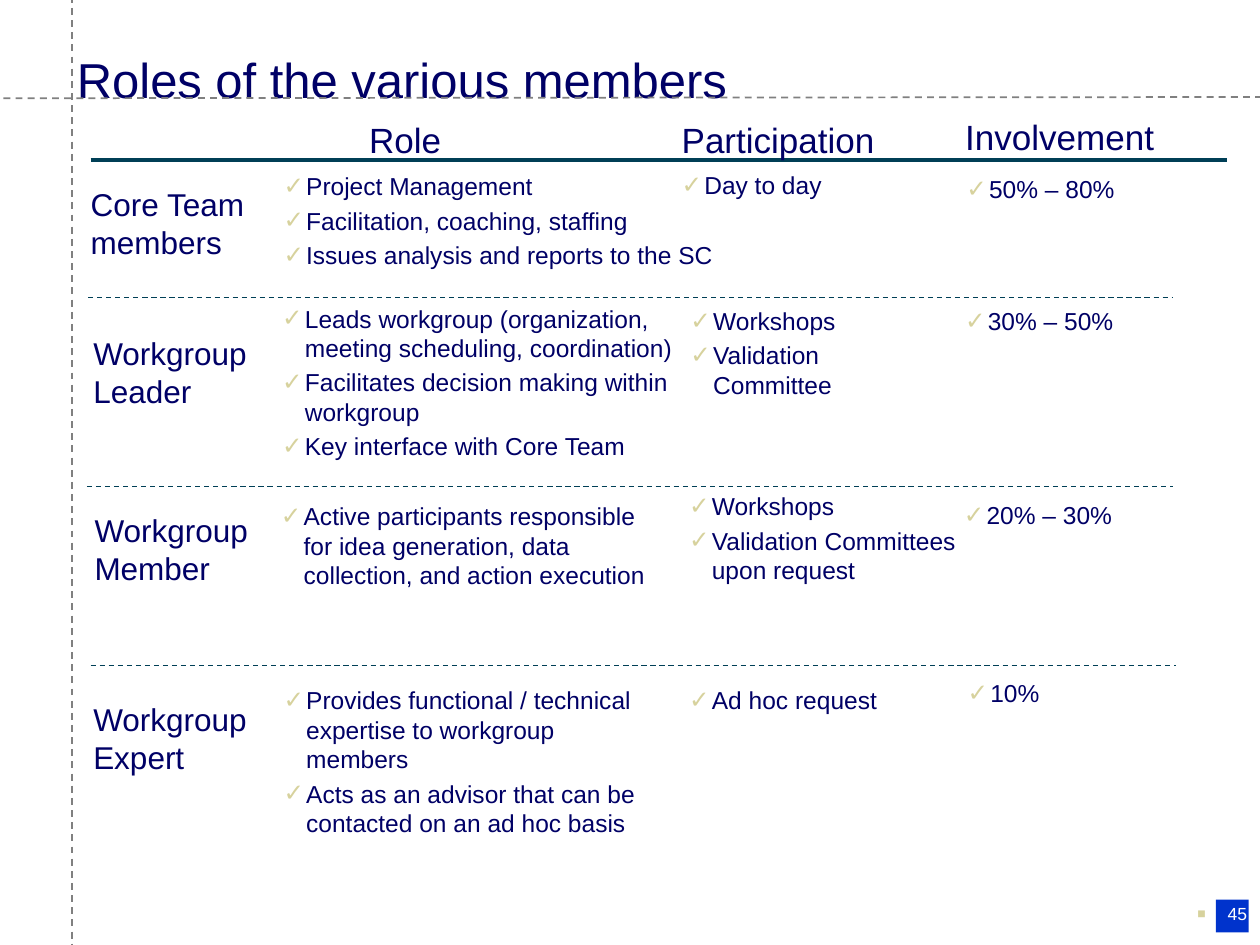
import pptx
import pptx.util
import pptx.dml.color
import pptx.enum.dml
import pptx.enum.shapes
import pptx.enum.text
import lxml.etree
from dataclasses import dataclass

Inches, Pt = pptx.util.Inches, pptx.util.Pt
MSO_ANCHOR, PP_ALIGN = pptx.enum.text.MSO_ANCHOR, pptx.enum.text.PP_ALIGN
NS = "http://schemas.openxmlformats.org/drawingml/2006/main"


@dataclass(frozen=True)
class Theme:
    font: str = "Arial"
    text: str = "000066"
    bullet: str = "D7D29D"
    rule: str = "003F56"
    guide: str = "808080"
    badge: str = "0033CC"
    white: str = "FFFFFF"
    title_pt: int = 28
    header_pt: int = 20
    label_pt: int = 18
    body_pt: int = 14
    number_pt: int = 10


class SlideBuilder:
    """Draw styled elements on one slide."""

    def __init__(self, s, theme):
        self.s, self.theme = s, theme

    def color(self, value):
        return pptx.dml.color.RGBColor.from_string(value)

    def style(self, p, size, color):
        formats = {"name": self.theme.font, "size": Pt(size), "bold": False}
        for r in p.runs:
            for key, value in formats.items():
                setattr(r.font, key, value)
            r.font.color.rgb = self.color(color)

    def bullet(self, p, char, indent, percent=100):
        pPr = p._p.get_or_add_pPr()
        pPr.set("marL", str(Inches(indent)))
        pPr.set("indent", str(-Inches(indent)))
        clr = lxml.etree.SubElement(pPr, f"{{{NS}}}buClr")
        lxml.etree.SubElement(clr, f"{{{NS}}}srgbClr", val=self.theme.bullet)
        lxml.etree.SubElement(pPr, f"{{{NS}}}buSzPct", val=str(percent * 1000))
        lxml.etree.SubElement(pPr, f"{{{NS}}}buFont", typeface=self.theme.font)
        lxml.etree.SubElement(pPr, f"{{{NS}}}buChar", char=char)

    def title(self, text, x, y, w, h):
        sp = self.s.shapes.title
        frame = {"left": x, "top": y, "width": w, "height": h}
        for key, value in frame.items():
            setattr(sp, key, Inches(value))
        tf = sp.text_frame
        tf.text = text
        formats = {"vertical_anchor": MSO_ANCHOR.BOTTOM, "margin_bottom": 0,
                   "auto_size": pptx.enum.text.MSO_AUTO_SIZE.NONE}
        for key, value in formats.items():
            setattr(tf, key, value)
        p = tf.paragraphs[0]
        p.alignment, p.line_spacing = PP_ALIGN.LEFT, 1.1
        self.style(p, self.theme.title_pt, self.theme.text)

    def text(self, lines, x, y, w, h, size, checked=False):
        sp = self.s.shapes.add_textbox(*map(Inches, (x, y, w, h)))
        tf = sp.text_frame
        formats = {"word_wrap": True, "margin_left": 0, "margin_top": 0,
                   "margin_right": 0, "margin_bottom": 0}
        for key, value in formats.items():
            setattr(tf, key, value)
        for i, line in enumerate(lines):
            p = tf.paragraphs[0] if i == 0 else tf.add_paragraph()
            p.text = line
            if checked:
                self.bullet(p, "✓", 0.18)
            if i:
                p.space_before = Pt(size * 0.2)
            self.style(p, size, self.theme.text)

    def line(self, x1, y1, x2, y2, color, width, dashed=True):
        c = self.s.shapes.add_connector(
            pptx.enum.shapes.MSO_CONNECTOR.STRAIGHT, *map(Inches, (x1, y1, x2, y2)))
        c.line.color.rgb = self.color(color)
        c.line.width = Pt(width)
        if dashed:
            c.line.dash_style = pptx.enum.dml.MSO_LINE.DASH
        lxml.etree.SubElement(c._element.spPr, f"{{{NS}}}effectLst")

    def page_number(self, number):
        sp = self.s.shapes.add_shape(
            pptx.enum.shapes.MSO_SHAPE.RECTANGLE, *map(Inches, (9.65, 7.14, 0.26, 0.26)))
        sp.shadow.inherit = False
        sp.fill.solid()
        sp.fill.fore_color.rgb = self.color(self.theme.badge)
        sp.line.fill.background()
        box = self.s.shapes.add_textbox(*map(Inches, (9.2, 7.12, 1, 0.31)))
        box.text_frame.word_wrap = True
        p = box.text_frame.paragraphs[0]
        p.text = number
        p.alignment = PP_ALIGN.CENTER
        self.bullet(p, "■", 0.24, 80)
        self.style(p, self.theme.number_pt, self.theme.white)


HEADERS = [("Role", 2.93, 0.94, 2.13), ("Participation", 5.41, 0.94, 1.95),
           ("Involvement", 7.66, 0.92, 1.65)]
LABELS = [("Core Team members", 0.72, 1.47), ("Workgroup Leader", 0.74, 2.65),
          ("Workgroup Member", 0.75, 4.06), ("Workgroup Expert", 0.74, 5.56)]
CELLS = [
    (["Project Management", "Facilitation, coaching, staffing",
      "Issues analysis and reports to the SC"], 2.25, 1.36, 3.61, 0.79),
    (["Day to day"], 5.41, 1.35, 1.95, 0.23),
    (["50% – 80%"], 7.67, 1.38, 1.65, 0.51),
    (["Leads workgroup (organization, meeting scheduling, coordination)",
      "Facilitates decision making within workgroup",
      "Key interface with Core Team"], 2.24, 2.41, 3.1, 1.26),
    (["Workshops", "Validation Committee"], 5.48, 2.43, 1.95, 0.74),
    (["30% – 50%"], 7.66, 2.43, 1.65, 0.79),
    (["Active participants responsible for idea generation, data collection, "
      "and action execution"], 2.23, 3.98, 3.05, 0.7),
    (["Workshops", "Validation Committees upon request"], 5.47, 3.9, 2.44, 0.74),
    (["20% – 30%"], 7.65, 3.97, 1.97, 0.23),
    (["Provides functional / technical expertise to workgroup members",
      "Acts as an advisor that can be contacted on an ad hoc basis"],
     2.25, 5.44, 3.01, 0.98),
    (["Ad hoc request"], 5.47, 5.44, 1.95, 0.23),
    (["10%"], 7.68, 5.38, 1.65, 0.79),
]
DIVIDERS = [(0.7, 9.31, 2.36), (0.69, 9.31, 3.86), (0.72, 9.33, 5.28)]


def main():
    prs = pptx.Presentation()
    prs.slide_width, prs.slide_height = Inches(10), Inches(7.5)
    theme = Theme()
    b = SlideBuilder(prs.slides.add_slide(prs.slide_layouts[5]), theme)
    b.line(0.57, -0.13, 0.57, 7.63, theme.guide, 1)
    b.line(10.21, 0.77, -0.19, 0.78, theme.guide, 1)
    b.page_number("45")
    b.title("Roles of the various members", 0.51, 0.29, 8.01, 0.57)
    b.line(0.72, 1.27, 9.74, 1.27, theme.rule, 2.25, dashed=False)
    for x1, x2, y in DIVIDERS:
        b.line(x1, y, x2, y, theme.rule, 0.75)
    for text, x, y, w in HEADERS:
        b.text([text], x, y, w, 0.33, theme.header_pt)
    for text, x, y in LABELS:
        b.text([text], x, y, 1.95, 0.6, theme.label_pt)
    for lines, x, y, w, h in CELLS:
        b.text(lines, x, y, w, h, theme.body_pt, checked=True)
    prs.save("out.pptx")


if __name__ == "__main__":
    main()
